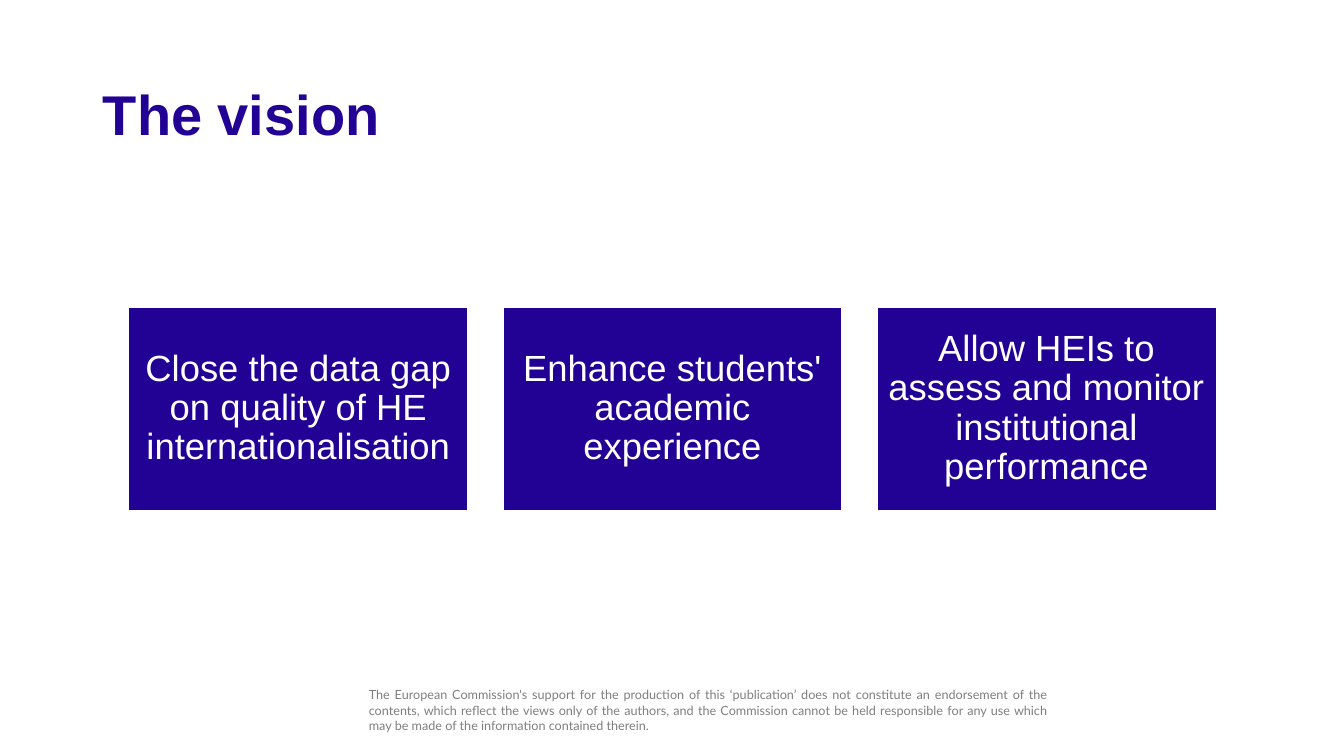
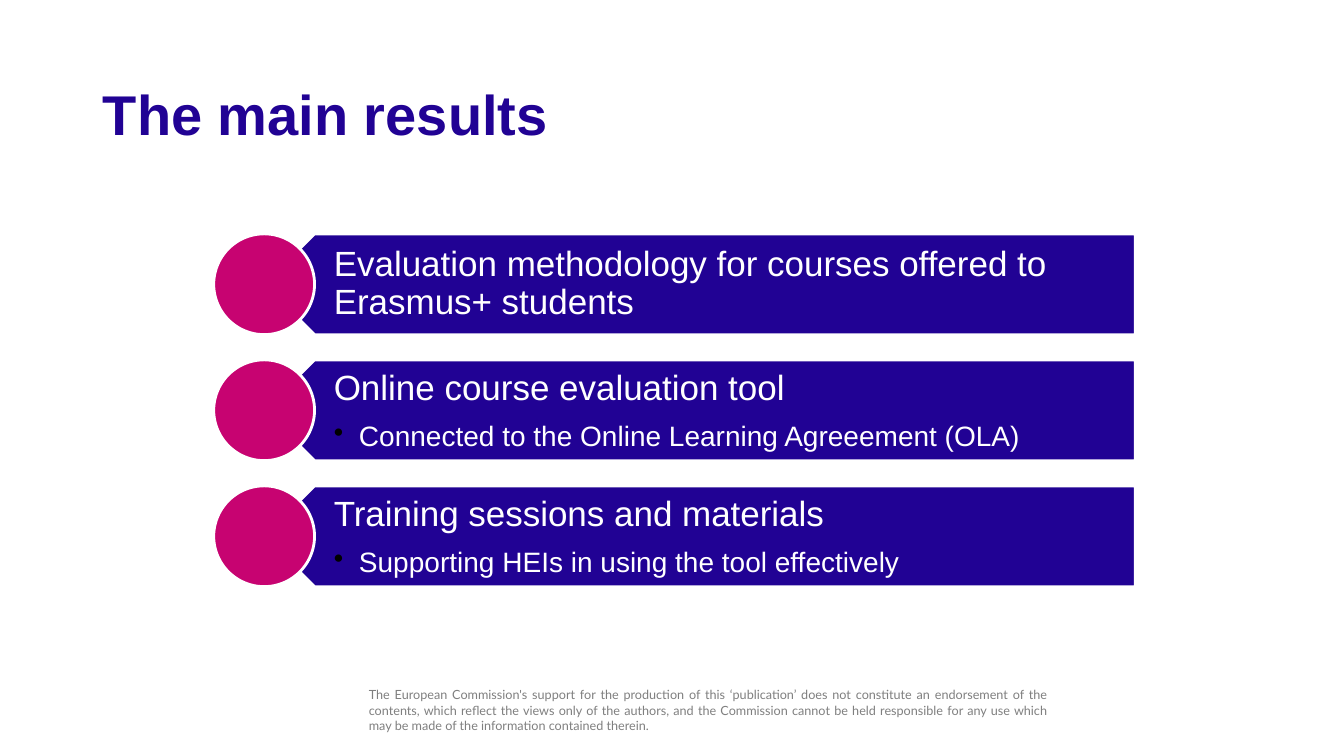
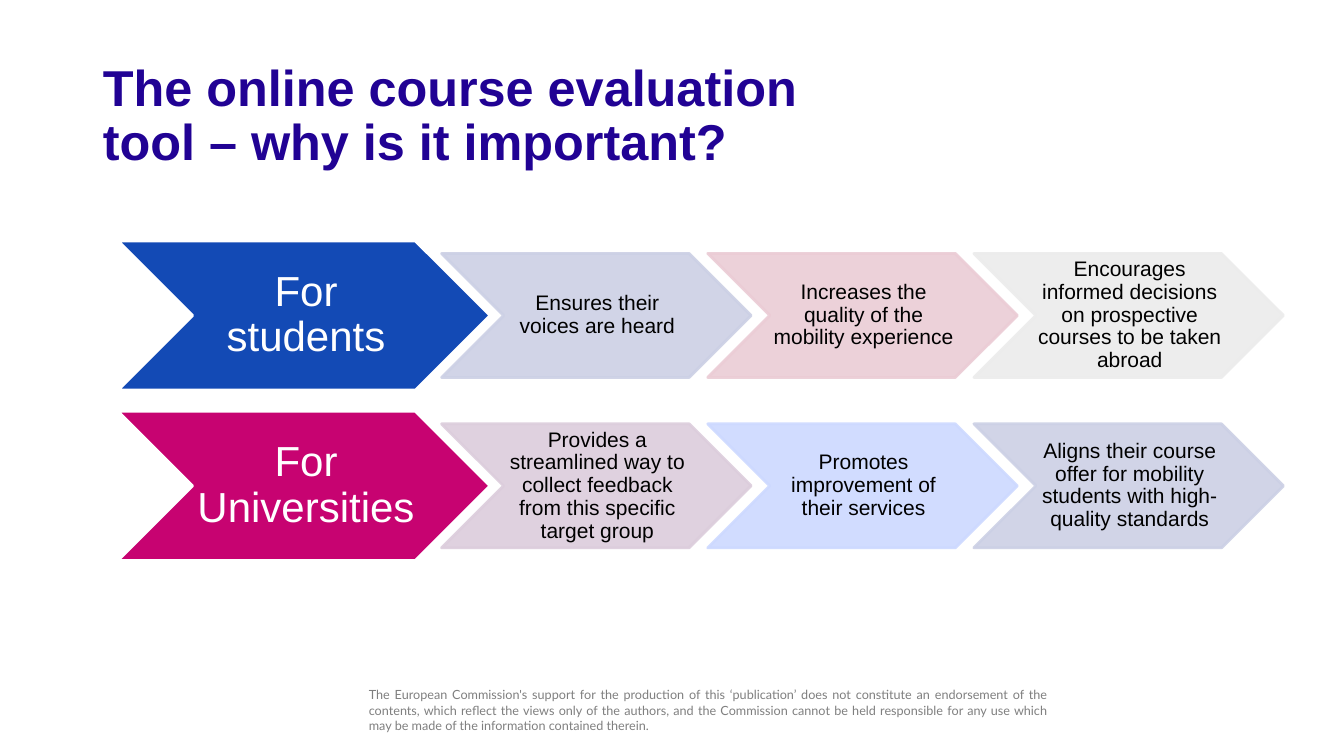
"""Build three slides on the vision, results and value of a course evaluation tool."""
from lxml import etree
from pptx import Presentation
from pptx import util as u
from pptx.dml.color import RGBColor
from pptx.enum import shapes, text
from pptx.oxml.ns import qn

COLORS = {
    "navy": "210294", "pink": "C70371", "blue": "134AB5", "white": "FFFFFF",
    "black": "000000", "grey": "7F7F7F", "lavender": "CCD0E5", "rose": "EBCCD5",
    "silver": "ECECEC", "mauve": "DCCDDC", "sky": "CDD9FF",
}
SHAPE = shapes.MSO_SHAPE
ALIGN = text.PP_ALIGN
ANCHOR = text.MSO_ANCHOR
FOOTER = (
    "The European Commission's support for the production of this ‘publication’ does not "
    "constitute an endorsement of the contents, which reflect the views only of the authors, "
    "and the Commission cannot be held responsible for any use which may be made of the "
    "information contained therein."
)


def add_shape(s, kind, box, color, line="white", alpha=None):
    sp = s.shapes.add_shape(kind, *map(u.Inches, box))
    sp.shadow.inherit = False
    sp.fill.solid()
    sp.fill.fore_color.rgb = RGBColor.from_string(COLORS[color])
    sp.line.color.rgb = RGBColor.from_string(COLORS[line])
    sp.line.width = u.Pt(2)
    if alpha:
        for clr in sp.element.spPr.iter(qn("a:srgbClr")):
            etree.SubElement(clr, qn("a:alpha"), val=str(alpha * 1000))
    return sp


def write(tf, words, size, color, insets=(0.1, 0.05, 0.1, 0.05), align=ALIGN.LEFT,
          anchor=ANCHOR.MIDDLE, spacing=0.9, **font):
    frame = {"word_wrap": True, "vertical_anchor": anchor, "auto_size": text.MSO_AUTO_SIZE.NONE}
    for side, inset in zip(("left", "top", "right", "bottom"), insets):
        frame["margin_" + side] = u.Inches(inset)
    for name, value in frame.items():
        setattr(tf, name, value)
    p = tf.paragraphs[0] if not tf.text else tf.add_paragraph()
    p.alignment, p.line_spacing = align, spacing
    r = p.add_run()
    r.text = words
    for name, value in {"size": u.Pt(size), "name": "Arial", **font}.items():
        setattr(r.font, name, value)
    r.font.color.rgb = RGBColor.from_string(COLORS[color])
    return p


prs = Presentation()
prs.slide_width, prs.slide_height = u.Inches(13.33), u.Inches(7.5)
layout = prs.slide_layouts[5]

slides = []
for words, size in (
    ("The vision", 40),
    ("The main results", 40),
    ("The online course evaluation tool – why is it important?", 36),
):
    s = prs.slides.add_slide(layout)
    title = s.shapes.title
    place = {"left": 0.92, "top": 0.55, "width": 7.29, "height": 1.23}
    for name, value in place.items():
        setattr(title, name, u.Inches(value))
    write(title.text_frame, words, size, "navy", bold=True)
    slides.append(s)
vision, results, reasons = slides

footer = vision.shapes.add_textbox(*map(u.Inches, (3.56, 6.77, 6.92, 0.56)))
write(footer.text_frame, FOOTER, 9, "grey", align=ALIGN.JUSTIFY, anchor=ANCHOR.TOP,
      spacing=1.0, name="Lato")
layout.shapes.element.append(footer.element)

goals = (
    "Close the data gap on quality of HE internationalisation",
    "Enhance students' academic experience",
    "Allow HEIs to assess and monitor institutional performance",
)
for i, goal in enumerate(goals):
    sp = add_shape(vision, SHAPE.RECTANGLE, (1.27 + 3.71 * i, 3.04, 3.38, 2.03), "navy")
    write(sp.text_frame, goal, 26, "white", (0.11,) * 4, ALIGN.CENTER)

outputs = (
    ("Evaluation methodology for courses offered to Erasmus+ students", None),
    ("Online course evaluation tool", "Connected to the Online Learning Agreeement (OLA)"),
    ("Training sessions and materials", "Supporting HEIs in using the tool effectively"),
)
insets = (0.44, 0.1, 0.19, 0.1)
for i, (heading, detail) in enumerate(outputs):
    top = 2.32 + 1.25 * i
    bar = add_shape(results, SHAPE.PENTAGON, (2.62, top, 8.64, 1), "navy")
    bar.rotation = 180
    tf = results.shapes.add_textbox(*map(u.Inches, (2.87, top, 8.39, 1))).text_frame
    anchor = ANCHOR.TOP if detail else ANCHOR.MIDDLE
    p = write(tf, heading, 25, "white", insets, anchor=anchor)
    if detail:
        p.space_after = u.Pt(10.5)
        p = write(tf, detail, 20, "white", insets, anchor=anchor)
        p.level = 1
        pPr = p._p.get_or_add_pPr()
        pPr.set("marL", str(u.Inches(0.25)))
        pPr.set("indent", str(-u.Inches(0.25)))
        bullet_color = etree.SubElement(pPr, qn("a:buClr"))
        etree.SubElement(bullet_color, qn("a:srgbClr"), val=COLORS["black"])
        etree.SubElement(pPr, qn("a:buChar"), char="•")
    add_shape(results, SHAPE.OVAL, (2.12, top, 1, 1), "pink")

audiences = (
    ("For students", "blue", (
        ("Ensures their voices are heard", "lavender"),
        ("Increases the quality of the mobility experience", "rose"),
        ("Encourages informed decisions on prospective courses to be taken abroad", "silver"),
    )),
    ("For Universities", "pink", (
        ("Provides a streamlined way to collect feedback from this specific target group", "mauve"),
        ("Promotes improvement of their services", "sky"),
        ("Aligns their course offer for mobility students with high-quality standards", "lavender"),
    )),
)
head_height, step_height = 1.48, 1.23
for row, (audience, color, benefits) in enumerate(audiences):
    top = 2.39 + 1.69 * row
    sp = add_shape(reasons, SHAPE.CHEVRON, (1.17, top, 3.69, head_height), color)
    write(sp.text_frame, audience, 30, "white", (0.04, 0.02, 0, 0.02), ALIGN.CENTER)
    step_top = top + (head_height - step_height) / 2
    for i, (benefit, tint) in enumerate(benefits):
        box = (4.38 + 2.64 * i, step_top, 3.07, step_height)
        sp = add_shape(reasons, SHAPE.CHEVRON, box, tint, line=tint, alpha=90)
        write(sp.text_frame, benefit, 15, "black", (0.02, 0.01, 0, 0.01), ALIGN.CENTER)

prs.save("out.pptx")
